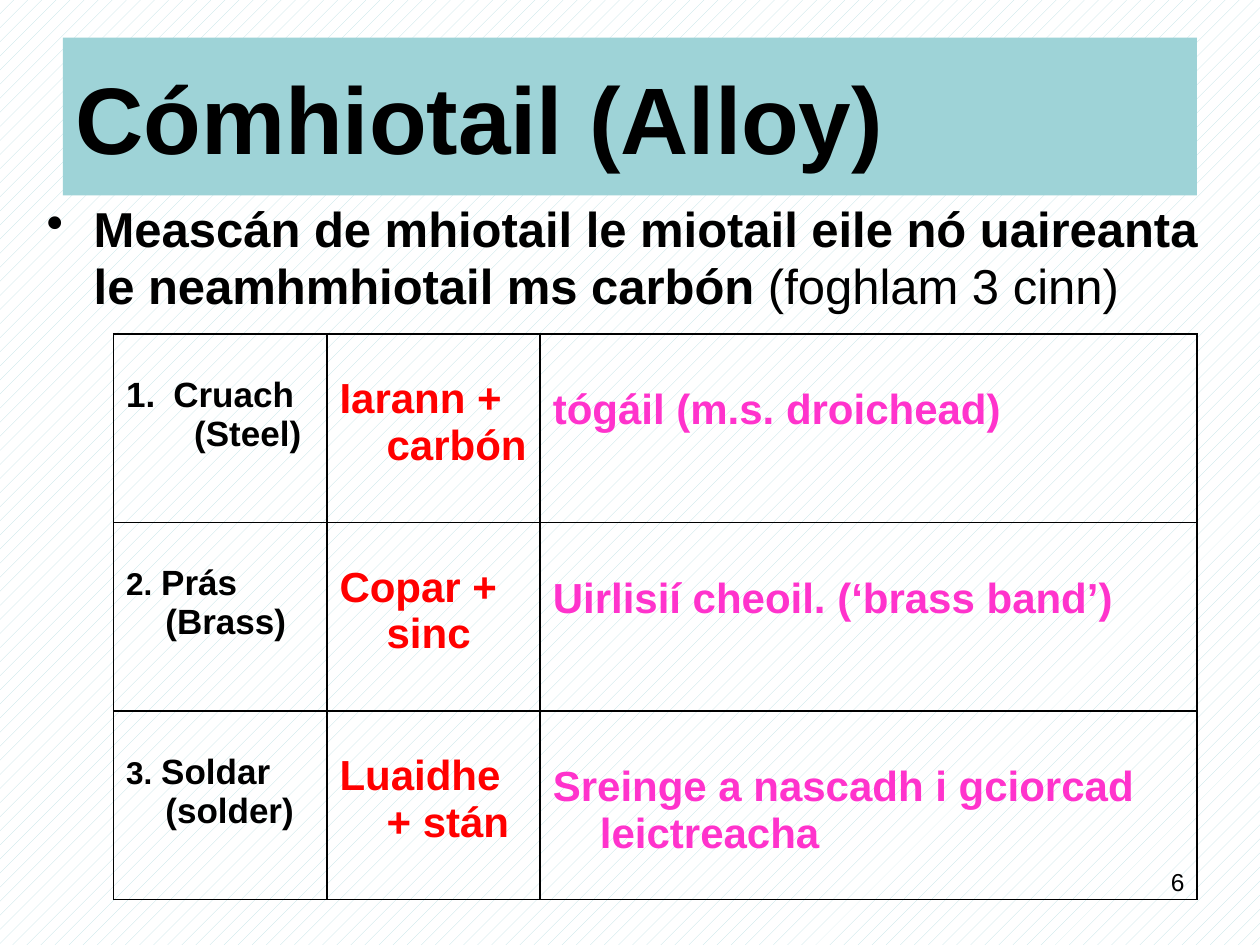
from pptx import Presentation
from pptx.dml.color import RGBColor
from pptx.enum.dml import MSO_PATTERN
from pptx.enum.shapes import MSO_SHAPE
from pptx.enum.text import MSO_ANCHOR, PP_ALIGN
from pptx.oxml import parse_xml
from pptx.oxml.ns import nsdecls
from pptx.util import Cm, Pt

BLACK, RED, PINK = "000000", "FF0000", "FF33CC"
HANGING = 0.95


def colour(value):
    return RGBColor.from_string(value)


class SlideBuilder:
    font = "Arial"

    def __init__(self, presentation):
        self.slide = presentation.slides.add_slide(presentation.slide_layouts[6])

    def background(self, foreground, background):
        fill = self.slide.background.fill
        fill.patterned()
        fill.pattern = MSO_PATTERN.PERCENT_10
        fill.fore_color.rgb = colour(foreground)
        fill.back_color.rgb = colour(background)

    def run(self, paragraph, text, size, bold=True, ink=BLACK):
        run = paragraph.add_run()
        run.text = text
        run.font.name = self.font
        run.font.size = Pt(size)
        run.font.bold = bold
        run.font.color.rgb = colour(ink)

    def indent(self, paragraph, left, first, bullet=None):
        properties = paragraph._p.get_or_add_pPr()
        properties.set("marL", str(Cm(left)))
        properties.set("indent", str(Cm(first)))
        if bullet:
            properties.append(parse_xml(bullet))

    def banner(self, text, box, fill):
        shape = self.slide.shapes.add_shape(MSO_SHAPE.RECTANGLE, *map(Cm, box))
        shape.shadow.inherit = False
        shape.fill.solid()
        shape.fill.fore_color.rgb = colour(fill)
        shape.line.fill.background()
        shape.text_frame.vertical_anchor = MSO_ANCHOR.MIDDLE
        paragraph = shape.text_frame.paragraphs[0]
        paragraph.alignment = PP_ALIGN.LEFT
        self.run(paragraph, text, 54)

    def text(self, box):
        frame = self.slide.shapes.add_textbox(*map(Cm, box)).text_frame
        frame.word_wrap = True
        return frame.paragraphs[0]

    def table(self, box, widths, row_count):
        table = self.slide.shapes.add_table(row_count, len(widths), *map(Cm, box)).table
        table.first_row = table.horz_banding = False
        for column, width in zip(table.columns, widths):
            column.width = Cm(width)
        for cell in table.iter_cells():
            cell.fill.background()
            self.borders(cell)
        return table

    def borders(self, cell):
        properties = cell._tc.get_or_add_tcPr()
        for position, side in enumerate("LRTB"):
            properties.insert(position, parse_xml(
                f'<a:ln{side} {nsdecls("a")} w="{Pt(1)}"><a:solidFill>'
                f'<a:srgbClr val="{BLACK}"/></a:solidFill></a:ln{side}>'))

    def cell_text(self, cell, text, top, ink):
        cell.margin_top = Cm(top)
        paragraph = cell.text_frame.paragraphs[0]
        self.indent(paragraph, HANGING, -HANGING)
        self.run(paragraph, text, 24, ink=ink)

    def alloy_name(self, cell, number, name, english):
        cell.margin_top = Cm(0.84)
        first = cell.text_frame.paragraphs[0]
        second = cell.text_frame.add_paragraph()
        if number:
            self.indent(first, HANGING, -HANGING)
            self.run(first, number, 18)
            self.indent(second, 0.79, 0)
        else:
            self.indent(first, HANGING, -HANGING,
                        f'<a:buAutoNum {nsdecls("a")} type="arabicPeriod"/>')
            self.indent(second, 1.37, 0)
        self.run(first, name, 20)
        self.run(second, english, 20)


def main():
    presentation = Presentation()
    presentation.slide_width, presentation.slide_height = Cm(25.4), Cm(19.05)
    builder = SlideBuilder(presentation)
    builder.background("BBE0E3", "FFFFFF")

    # Title
    builder.banner("Cómhiotail (Alloy)", (1.27, 0.76, 22.86, 3.18), "9ED3D7")

    # Definition
    definition = builder.text((0.69, 3.94, 24, 3))
    definition.line_spacing = 0.97
    builder.indent(definition, HANGING, -HANGING, f'<a:buChar {nsdecls("a")} char="•"/>')
    builder.run(definition, "Meascán de mhiotail le miotail eile nó uaireanta "
                            "le neamhmhiotail ms carbón", 28)
    builder.run(definition, " (foghlam 3 cinn)", 28, bold=False)

    # Alloys: number, name, English name, composition, use
    alloys = [
        (None, "Cruach", "(Steel)", "Iarann + carbón", "tógáil (m.s. droichead)"),
        ("2. ", "Prás", "(Brass)", "Copar + sinc", "Uirlisií cheoil. (‘brass band’)"),
        ("3. ", "Soldar", "(solder)", "Luaidhe + stán",
         "Sreinge a nascadh i gciorcad leictreacha"),
    ]
    table = builder.table((2.29, 6.73, 21.84, 11.4), (4.3, 4.3, 13.24), len(alloys))
    for row, (number, name, english, composition, use) in enumerate(alloys):
        builder.alloy_name(table.cell(row, 0), number, name, english)
        builder.cell_text(table.cell(row, 1), composition, 0.84, RED)
        builder.cell_text(table.cell(row, 2), use, 1.07, PINK)

    # Page number
    page = builder.text((18.2, 17.35, 5.93, 1.32))
    page.alignment = PP_ALIGN.RIGHT
    builder.run(page, "6", 14, bold=False)

    presentation.save("out.pptx")


if __name__ == "__main__":
    main()
